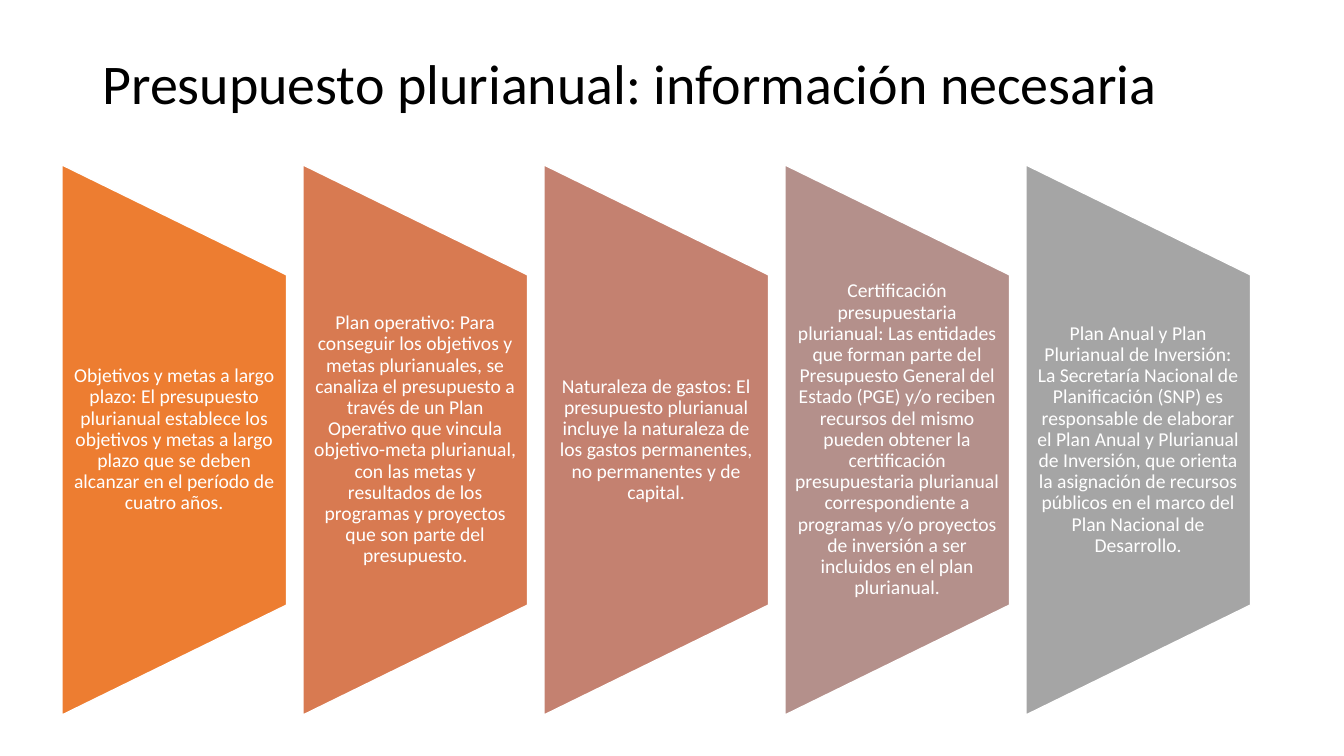
from dataclasses import dataclass

from pptx import Presentation
from pptx.dml.color import RGBColor
from pptx.enum.shapes import MSO_SHAPE
from pptx.enum.text import MSO_ANCHOR, MSO_AUTO_SIZE, PP_ALIGN
from pptx.util import Emu, Pt


@dataclass(frozen=True)
class Theme:
    """Colours, font and type sizes of the slide."""
    font: str = "Calibri"
    title_size: int = 40
    body_size: int = 14
    title_color: str = "000000"
    light: str = "FFFFFF"
    panels: tuple = ("ED7D31", "D87A51", "C48170", "B4908B", "A5A5A5")


THEME = Theme()
EMU_PER_PX = 9525
SLIDE_SIZE = (1280, 720)
TITLE_BOX = (88, 38, 1104, 89)
PANELS_BOX = (59, 157, 1132, 524)
PANEL_W = 214

TITLE = "Presupuesto plurianual: información necesaria"
REQUIREMENTS = (
    "Objetivos y metas a largo plazo: El presupuesto plurianual establece los objetivos "
    "y metas a largo plazo que se deben alcanzar en el período de cuatro años.",
    "Plan operativo: Para conseguir los objetivos y metas plurianuales, se canaliza el "
    "presupuesto a través de un Plan Operativo que vincula objetivo-meta plurianual, con "
    "las metas y resultados de los programas y proyectos que son parte del presupuesto.",
    "Naturaleza de gastos: El presupuesto plurianual incluye la naturaleza de los gastos "
    "permanentes, no permanentes y de capital.",
    "Certificación presupuestaria plurianual: Las entidades que forman parte del "
    "Presupuesto General del Estado (PGE) y/o reciben recursos del mismo pueden obtener "
    "la certificación presupuestaria plurianual correspondiente a programas y/o proyectos "
    "de inversión a ser incluidos en el plan plurianual.",
    "Plan Anual y Plan Plurianual de Inversión: La Secretaría Nacional de Planificación "
    "(SNP) es responsable de elaborar el Plan Anual y Plurianual de Inversión, que orienta "
    "la asignación de recursos públicos en el marco del Plan Nacional de Desarrollo.",
)


def px(n):
    """Turn pixels into EMU."""
    return Emu(round(n * EMU_PER_PX))


def write(tf, text, size, color, align):
    """Write one vertically centred paragraph into a text frame."""
    tf.word_wrap = True
    tf.auto_size = MSO_AUTO_SIZE.NONE
    tf.vertical_anchor = MSO_ANCHOR.MIDDLE
    p = tf.paragraphs[0]
    p.alignment = align
    p.line_spacing = 0.9
    r = p.add_run()
    r.text = text
    r.font.name = THEME.font
    r.font.size = Pt(size)
    r.font.color.rgb = RGBColor.from_string(color)


def add_title(s, box):
    """Place and format the title placeholder."""
    title = s.shapes.title
    title.left, title.top, title.width, title.height = map(px, box)
    write(title.text_frame, TITLE, THEME.title_size, THEME.title_color, PP_ALIGN.LEFT)


def add_panel(s, box, text, color):
    """Draw a trapezoid turned on its side, with text in its middle three fifths."""
    x, y, w, h = box
    sp = s.shapes.add_shape(MSO_SHAPE.FLOWCHART_MANUAL_OPERATION,
                            px(x + (w - h) / 2), px(y + (h - w) / 2), px(h), px(w))
    sp.rotation = 270
    sp.shadow.inherit = False
    sp.fill.solid()
    sp.fill.fore_color.rgb = RGBColor.from_string(color)
    sp.line.color.rgb = RGBColor.from_string(THEME.light)
    sp.line.width = Pt(1)

    tf = s.shapes.add_textbox(px(x), px(y + h / 5), px(w), px(h * 3 / 5)).text_frame
    tf.margin_top = tf.margin_bottom = 0
    write(tf, text, THEME.body_size, THEME.light, PP_ALIGN.CENTER)


def add_panels(s, box):
    """Spread the panels evenly across the box."""
    x, y, w, h = box
    pitch = (w - PANEL_W) / (len(REQUIREMENTS) - 1)
    for i, (text, color) in enumerate(zip(REQUIREMENTS, THEME.panels)):
        add_panel(s, (x + i * pitch, y, PANEL_W, h), text, color)


def main():
    """Build and save the presentation."""
    prs = Presentation()
    prs.slide_width, prs.slide_height = map(px, SLIDE_SIZE)
    s = prs.slides.add_slide(prs.slide_layouts.get_by_name("Title Only"))
    add_title(s, TITLE_BOX)
    add_panels(s, PANELS_BOX)
    prs.save("out.pptx")


if __name__ == "__main__":
    main()
